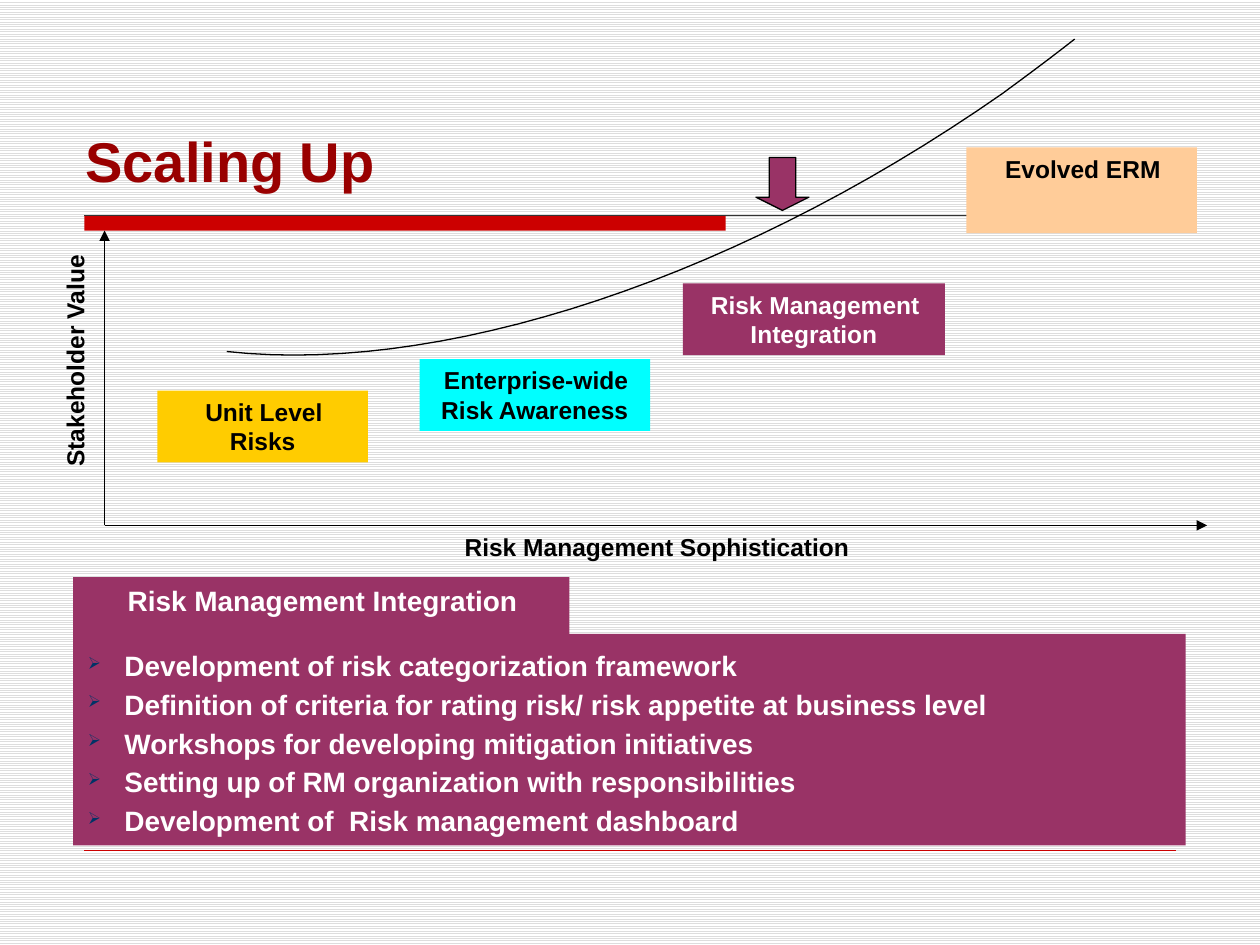
from lxml import etree
from pptx import Presentation
from pptx.dml.color import RGBColor
from pptx.enum.dml import MSO_PATTERN
from pptx.enum.shapes import MSO_CONNECTOR, MSO_SHAPE
from pptx.enum.text import MSO_ANCHOR, PP_ALIGN
from pptx.oxml.ns import qn
from pptx.util import Inches, Pt

RECT, DOWN_ARROW = MSO_SHAPE.RECTANGLE, MSO_SHAPE.DOWN_ARROW
STRAIGHT = MSO_CONNECTOR.STRAIGHT
LEFT, CENTER, JUSTIFY = PP_ALIGN.LEFT, PP_ALIGN.CENTER, PP_ALIGN.JUSTIFY
TOP, BOTTOM = MSO_ANCHOR.TOP, MSO_ANCHOR.BOTTOM
STRIPES = MSO_PATTERN.LIGHT_HORIZONTAL

RED, DARK_RED, PLUM = "CC0000", "990000", "993366"
BLACK, DARK_GREY, WHITE, NAVY = "000000", "333333", "FFFFFF", "003366"
FONT = "Arial"

TITLE = ("Scaling Up", (0.58, 1.17, 3.5, 0.42))
BAR = (0.67, 1.71, 5.09, 0.12)
RULES = [
    ((0.67, 1.71), (9.37, 1.71), DARK_GREY, 0.75),
    ((0.67, 6.75), (9.33, 6.75), RED, 0.25),
]
HEADING = ("Risk Management Integration", (0.58, 4.58, 3.94, 0.49))
ACTIONS_BOX = (0.58, 5.03, 8.83, 1.68)
ACTIONS = [
    "Development of risk categorization framework",
    "Definition of criteria for rating risk/ risk appetite at business level",
    "Workshops for developing mitigation initiatives",
    "Setting up of RM organization with responsibilities",
    "Development of  Risk management dashboard",
]
ORIGIN = (0.83, 4.17)
AXIS_ENDS = [(0.83, 1.83), (9.58, 4.17)]
AXIS_LABELS = [
    ("Risk Management Sophistication", (2.83, 4.17, 4.75, 0.33), 0),
    ("Stakeholder Value", (-0.62, 2.71, 2.42, 0.33), 270),
]
STAGES = [
    ("Unit Level Risks", (1.25, 3.1, 1.67, 0.57), "FFCC00", BLACK),
    ("Enterprise-wide Risk Awareness", (3.33, 2.85, 1.83, 0.57), "00FFFF", BLACK),
    ("Risk Management Integration", (5.42, 2.25, 2.08, 0.57), PLUM, WHITE),
    ("Evolved ERM", (7.67, 1.17, 1.83, 0.68), "FFCC99", BLACK),
]
MARKER = (6, 1.25, 0.42, 0.42)
CURVE = [
    ((8.53, 0.31), (8.34, 0.46), (8.15, 0.6), (7.96, 0.74)),
    ((7.96, 0.74), (5.87, 2.2), (3.53, 2.98), (1.8, 2.79)),
]
CURVE_STEPS = 30


def color(value):
    return RGBColor.from_string(value)


def add_box(slide, kind, place, fill, line=None):
    box = slide.shapes.add_shape(kind, *map(Inches, place))
    box.shadow.inherit = False
    box.fill.solid()
    box.fill.fore_color.rgb = color(fill)
    if line:
        box.line.color.rgb = color(line)
        box.line.width = Pt(0.75)
    else:
        box.line.fill.background()
    return box


def add_line(slide, start, end, ink, width, arrow=False):
    line = slide.shapes.add_connector(STRAIGHT, *map(Inches, start + end))
    line.line.color.rgb = color(ink)
    line.line.width = Pt(width)
    if arrow:
        outline = line.line._get_or_add_ln()
        etree.SubElement(outline, qn("a:tailEnd"), type="triangle")
    etree.SubElement(line._element.spPr, qn("a:effectLst"))


def write(shape, lines, size, ink, align=CENTER, anchor=TOP):
    frame = shape.text_frame
    frame.word_wrap = True
    frame.vertical_anchor = anchor
    for index, text in enumerate(lines):
        paragraph = frame.paragraphs[0] if index == 0 else frame.add_paragraph()
        paragraph.alignment = align
        if align == CENTER:
            paragraph._p.get_or_add_pPr().set("indent", str(Inches(0.02)))
        run = paragraph.add_run()
        run.text = text
        looks = {"name": FONT, "size": Pt(size), "bold": True}
        for name, value in looks.items():
            setattr(run.font, name, value)
        run.font.color.rgb = color(ink)
    return frame.paragraphs


def add_label(slide, text, place, size, ink, align=CENTER, anchor=TOP):
    label = slide.shapes.add_textbox(*map(Inches, place))
    write(label, [text], size, ink, align, anchor)
    return label


def add_bullet(paragraph):
    properties = paragraph._p.get_or_add_pPr()
    properties.set("marL", str(Inches(0.31)))
    properties.set("indent", str(Inches(-0.29)))
    bullet_color = etree.SubElement(properties, qn("a:buClr"))
    etree.SubElement(bullet_color, qn("a:srgbClr"), val=NAVY)
    etree.SubElement(properties, qn("a:buSzPct"), val="60000")
    etree.SubElement(properties, qn("a:buChar"), char="➢")


def bezier(points, t):
    weights = ((1 - t) ** 3, 3 * t * (1 - t) ** 2, 3 * t * t * (1 - t), t ** 3)
    return tuple(
        Inches(sum(w * point[axis] for w, point in zip(weights, points)))
        for axis in (0, 1)
    )


def add_curve(slide):
    points = [
        bezier(part, step / CURVE_STEPS)
        for part in CURVE
        for step in range(CURVE_STEPS + 1)
    ]
    builder = slide.shapes.build_freeform(*points[0])
    builder.add_line_segments(points[1:], close=False)
    curve = builder.convert_to_shape()
    curve.shadow.inherit = False
    curve.fill.background()
    curve.line.color.rgb = color(BLACK)
    curve.line.width = Pt(0.75)


def main():
    deck = Presentation()
    deck.slide_width, deck.slide_height = Inches(10), Inches(7.5)
    slide = deck.slides.add_slide(deck.slide_layouts[6])
    backdrop = slide.background.fill
    backdrop.patterned()
    backdrop.pattern = STRIPES
    backdrop.fore_color.rgb = color("DDDDDD")
    backdrop.back_color.rgb = color(WHITE)

    add_box(slide, RECT, BAR, RED)
    for rule in RULES:
        add_line(slide, *rule)
    add_label(slide, *TITLE, 32, DARK_RED, LEFT, BOTTOM)

    heading, place = HEADING
    write(add_box(slide, RECT, place, PLUM), [heading], 16, WHITE)
    actions_box = add_box(slide, RECT, ACTIONS_BOX, PLUM)
    actions = write(actions_box, ACTIONS, 16, WHITE, JUSTIFY)
    actions[0].line_spacing = 1.25
    for action in actions:
        action.space_before = Pt(3)
        add_bullet(action)

    for end in AXIS_ENDS:
        add_line(slide, ORIGIN, end, BLACK, 0.75, arrow=True)
    for stage, place, fill, ink in STAGES:
        write(add_box(slide, RECT, place, fill), [stage], 14, ink)
    add_box(slide, DOWN_ARROW, MARKER, PLUM, BLACK).adjustments[1] = 0.25
    for text, place, angle in AXIS_LABELS:
        add_label(slide, text, place, 14, BLACK).rotation = angle
    add_curve(slide)
    deck.save("out.pptx")


if __name__ == "__main__":
    main()
